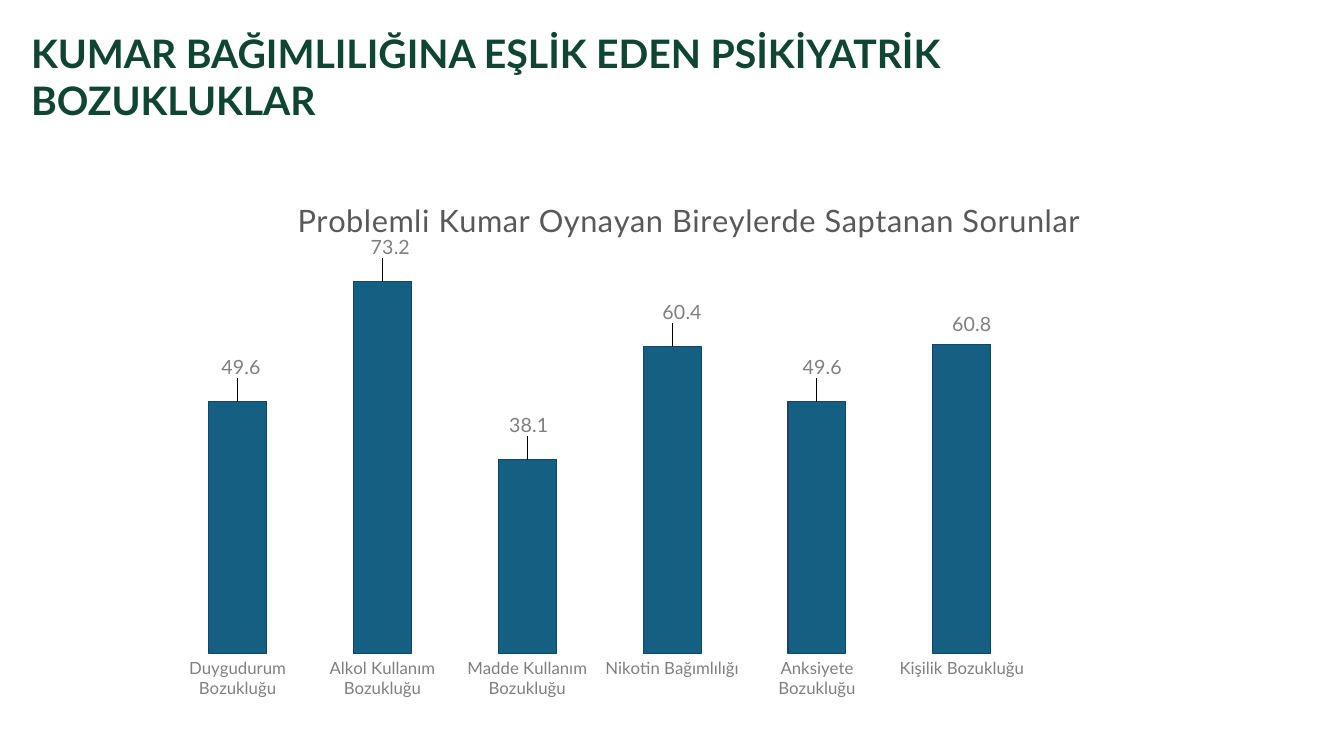
import pptx
import pptx.chart.data
import pptx.dml.color
import pptx.enum.chart
import pptx.enum.text
import pptx.oxml
import pptx.oxml.ns
import pptx.util
from pptx.util import Cm

DISORDERS = {
    "Duygudurum Bozukluğu": 49.6,
    "Alkol Kullanım Bozukluğu": 73.2,
    "Madde Kullanım Bozukluğu": 38.1,
    "Nikotin Bağımlılığı": 60.4,
    "Anksiyete Bozukluğu": 49.6,
    "Kişilik Bozukluğu": 60.8,
    "": None,  # free slot at the right end
}
# Shift of each value label from its usual place, in percent of the chart
LABEL_SHIFTS = [(0.33, -3.5), (0.76, -3.5), (0.14, -3.5),
                (0.95, -3.5), (0.5, -3.5), (0.95, -0.9)]


def rgb(code):
    return pptx.dml.color.RGBColor.from_string(code)


def manual_layout(**settings):
    """Return a c:layout element with the given manual settings."""
    layout = pptx.oxml.parse_xml(f"<c:layout {pptx.oxml.ns.nsdecls('c')}><c:manualLayout/></c:layout>")
    for tag, value in settings.items():
        setting = layout[0].makeelement(pptx.oxml.ns.qn(f"c:{tag}"), {"val": str(value)})
        layout[0].append(setting)
    return layout


def place(parent, layout, after=None):
    """Give a chart part its layout, behind the named child or first."""
    for old in parent.findall(pptx.oxml.ns.qn("c:layout")):
        parent.remove(old)
    if after is None:
        parent.insert(0, layout)
    else:
        parent.find(pptx.oxml.ns.qn(after)).addnext(layout)


class Deck:
    face = "Lato"
    green, blue, edge = "114533", "156082", "104862"
    grey, dark_grey = "808080", "595959"

    def __init__(self):
        self.presentation = pptx.Presentation()
        self.presentation.slide_width = Cm(33.87)
        self.presentation.slide_height = Cm(19.05)
        self.slide = self.presentation.slides.add_slide(self.presentation.slide_layouts[5])

    def style(self, font, size, color, bold=False):
        font.name, font.size, font.bold = self.face, pptx.util.Pt(size), bold
        font.color.rgb = rgb(color)

    def heading(self, text, left, top, width, height):
        heading = self.slide.shapes.title
        heading.left, heading.top = Cm(left), Cm(top)
        heading.width, heading.height = Cm(width), Cm(height)
        frame = heading.text_frame
        frame.text = text
        frame.word_wrap = True
        frame.auto_size = pptx.enum.text.MSO_AUTO_SIZE.SHAPE_TO_FIT_TEXT
        frame.vertical_anchor = pptx.enum.text.MSO_ANCHOR.TOP
        frame.paragraphs[0].alignment = pptx.enum.text.PP_ALIGN.LEFT
        self.style(frame.paragraphs[0].runs[0].font, 28, self.green, bold=True)

    def column_chart(self, caption, values, shifts, left, top, width, height):
        data = pptx.chart.data.CategoryChartData(number_format="General")
        data.categories = list(values)
        data.add_series("Series 1", list(values.values()))
        chart = self.slide.shapes.add_chart(
            pptx.enum.chart.XL_CHART_TYPE.COLUMN_CLUSTERED,
            Cm(left), Cm(top), Cm(width), Cm(height), data).chart
        self.style(chart.font, 10, "000000")
        chart.has_legend = False

        # Chart title
        chart.has_title = True
        frame = chart.chart_title.text_frame
        frame.text = caption
        run = frame.paragraphs[0].runs[0]
        self.style(run.font, 22, self.dark_grey)
        run.font._element.set("spc", "50")
        place(chart.chart_title._element,
              manual_layout(xMode="edge", yMode="edge", x=0.14, y=0.05), "c:tx")

        # Axes and plot area
        axis = chart.category_axis
        axis.major_tick_mark = pptx.enum.chart.XL_TICK_MARK.NONE
        axis.format.line.fill.background()
        self.style(axis.tick_labels.font, 12, self.grey)
        scale = chart.value_axis
        scale.minimum_scale, scale.maximum_scale = 0, 80
        scale.has_major_gridlines = False
        scale.visible = False
        plot_area = chart.element.find(".//" + pptx.oxml.ns.qn("c:plotArea"))
        place(plot_area, manual_layout(layoutTarget="inner", xMode="edge", yMode="edge",
                                       x=0.02, y=0.15, w=0.96, h=0.75))

        # Columns
        plot = chart.plots[0]
        plot.gap_width = 150
        plot.vary_by_categories = False
        columns = plot.series[0]
        columns.format.fill.solid()
        columns.format.fill.fore_color.rgb = rgb(self.blue)
        columns.format.line.color.rgb = rgb(self.edge)
        columns.format.line.width = pptx.util.Pt(0.75)

        # Value labels
        outside = pptx.enum.chart.XL_LABEL_POSITION.OUTSIDE_END
        labels = columns.data_labels
        labels.show_value = True
        labels.position = outside
        self.style(labels.font, 14, self.grey)
        for index, (across, down) in enumerate(shifts):
            label = columns.points[index].data_label
            label.position = outside
            self.style(label.font, 14, self.grey)
        for element, (across, down) in zip(labels._element.findall(pptx.oxml.ns.qn("c:dLbl")), shifts):
            place(element, manual_layout(x=across / 100, y=down / 100), "c:idx")


def main():
    deck = Deck()
    deck.heading("KUMAR BAĞIMLILIĞINA EŞLİK EDEN PSİKİYATRİK BOZUKLUKLAR",
                 0.53, 0.61, 26.87, 2.64)
    deck.column_chart("Problemli Kumar Oynayan Bireylerde Saptanan Sorunlar",
                      DISORDERS, LABEL_SHIFTS, 3.63, 4.17, 26.62, 13.67)
    deck.presentation.save("out.pptx")


if __name__ == "__main__":
    main()
